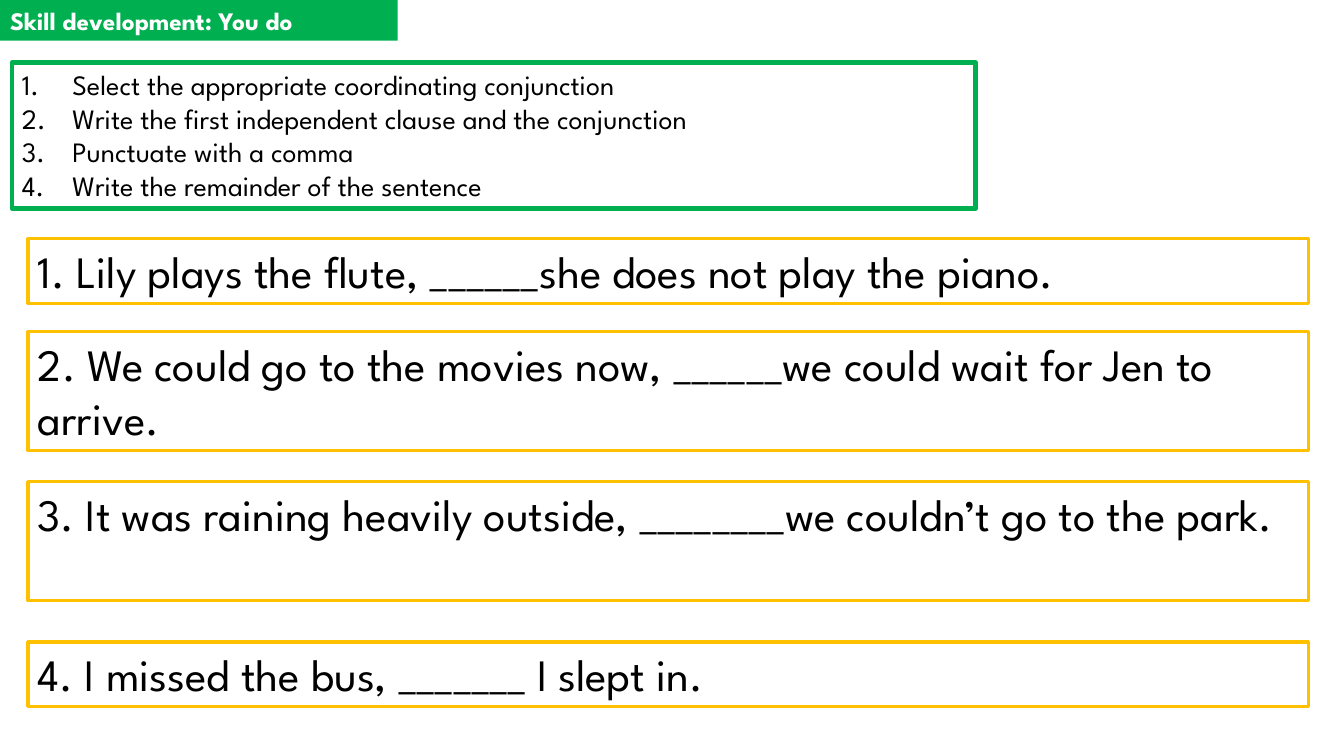
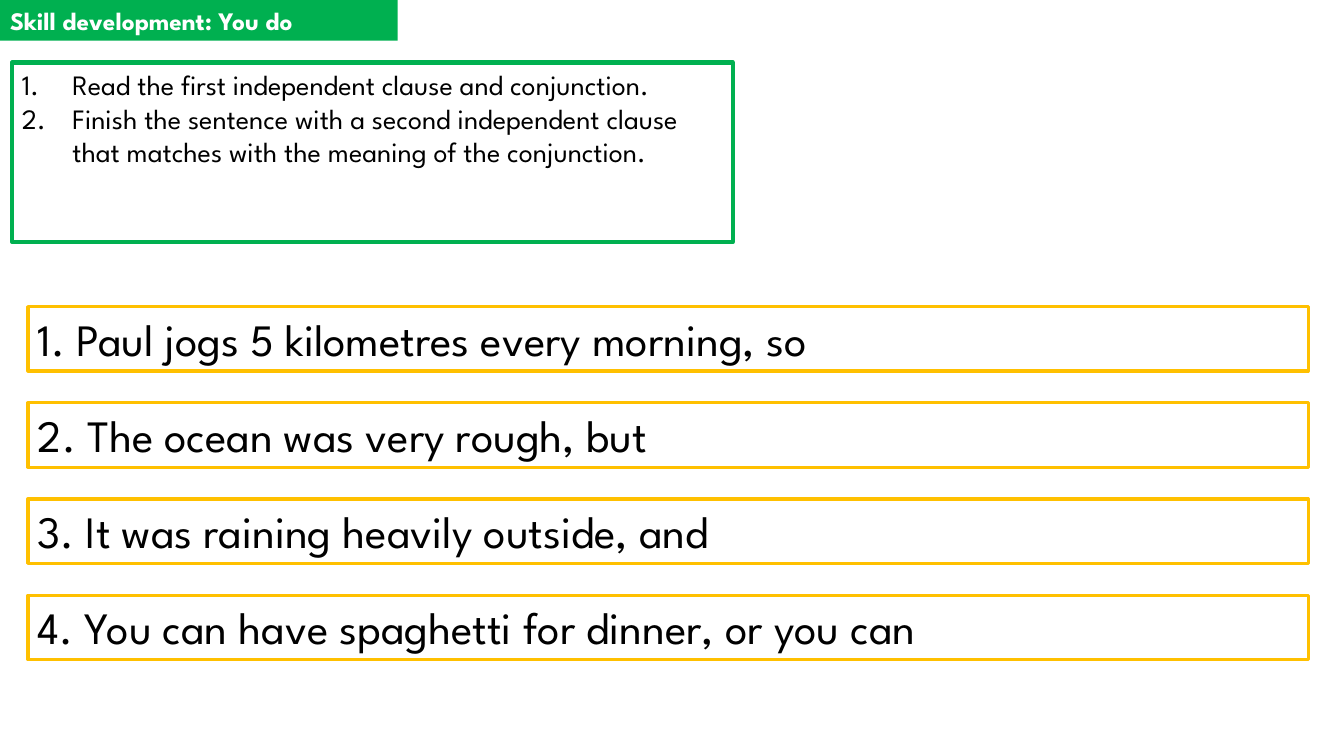
from lxml.etree import SubElement
from pptx import Presentation
from pptx.dml.color import RGBColor
from pptx.enum.text import MSO_ANCHOR, MSO_AUTO_SIZE, PP_ALIGN
from pptx.oxml.ns import qn
from pptx.util import Pt

COLOURS = {"band": "00B050", "question": "FFC000", "text": "000000", "paper": "FFFFFF"}
FONT = "League Spartan"
HEADING = "Skill development: You do"
ONE_LINE = 46
TWO_LINES = 85
QUESTION_PITCH = 68.7


def colour(name):
    return RGBColor.from_string(COLOURS[name])


class Worksheet:
    def __init__(self):
        self.deck = Presentation()
        self.deck.slide_width = Pt(960)
        self.deck.slide_height = Pt(540)
        self.slide = None

    def new_slide(self, heading):
        self.slide = self.deck.slides.add_slide(self.deck.slide_layouts[5])
        band = self.slide.shapes.title
        band.left, band.top, band.width, band.height = Pt(0), Pt(0), Pt(284), Pt(29)
        band.fill.solid()
        band.fill.fore_color.rgb = colour("band")
        self.set_text(band, [heading], 18, "paper", bold=True)

    def set_text(self, box, lines, size, ink, bold=False):
        frame = box.text_frame
        frame.text = "\n".join(lines)
        frame.word_wrap = True
        frame.auto_size = MSO_AUTO_SIZE.NONE
        frame.vertical_anchor = MSO_ANCHOR.TOP
        for paragraph in frame.paragraphs:
            paragraph.alignment = PP_ALIGN.LEFT
            paragraph.font.name = FONT
            paragraph.font.size = Pt(size)
            paragraph.font.bold = bold
            paragraph.font.color.rgb = colour(ink)

    def outlined_box(self, left, top, width, height, outline, weight):
        box = self.slide.shapes.add_textbox(Pt(left), Pt(top), Pt(width), Pt(height))
        box.line.color.rgb = colour(outline)
        box.line.width = Pt(weight)
        return box

    def steps(self, lines, width, height):
        box = self.outlined_box(8.6, 44.6, width, height, "band", 3)
        box.fill.solid()
        box.fill.fore_color.rgb = colour("paper")
        self.set_text(box, lines, 20, "text")
        for paragraph in box.text_frame.paragraphs:
            properties = paragraph._p.get_or_add_pPr()
            properties.set("marL", str(Pt(36)))
            properties.set("indent", str(-Pt(36)))
            numbering = SubElement(properties, qn("a:buAutoNum"))
            numbering.set("type", "arabicPeriod")
            properties.insert_element_before(numbering, "a:tabLst", "a:defRPr", "a:extLst")

    def question(self, sentence, top, height=ONE_LINE):
        box = self.outlined_box(20, top, 914.4, height, "question", 2.25)
        self.set_text(box, [sentence], 32, "text")

    def save(self):
        self.deck.save("out.pptx")


def main():
    sheet = Worksheet()

    sheet.new_slide(HEADING)
    sheet.steps([
        "Select the appropriate coordinating conjunction",
        "Write the first independent clause and the conjunction",
        "Punctuate with a comma",
        "Write the remainder of the sentence",
    ], 688.3, 104.4)
    for sentence, top, height in [
        ("1. Lily plays the flute, ______she does not play the piano.", 170.6, ONE_LINE),
        ("2. We could go to the movies now, ______we could wait for Jen to arrive.", 237, TWO_LINES),
        ("3. It was raining heavily outside, ________we couldn’t go to the park.", 344, TWO_LINES),
        ("4. I missed the bus, _______ I slept in.", 458.6, ONE_LINE),
    ]:
        sheet.question(sentence, top, height)

    sheet.new_slide(HEADING)
    sheet.steps([
        "Read the first independent clause and conjunction.",
        "Finish the sentence with a second independent clause that matches "
        "with the meaning of the conjunction.",
    ], 514.8, 128.2)
    for index, sentence in enumerate([
        "1. Paul jogs 5 kilometres every morning, so",
        "2. The ocean was very rough, but",
        "3. It was raining heavily outside, and",
        "4. You can have spaghetti for dinner, or you can",
    ]):
        sheet.question(sentence, 219 + index * QUESTION_PITCH)

    sheet.save()


if __name__ == "__main__":
    main()
